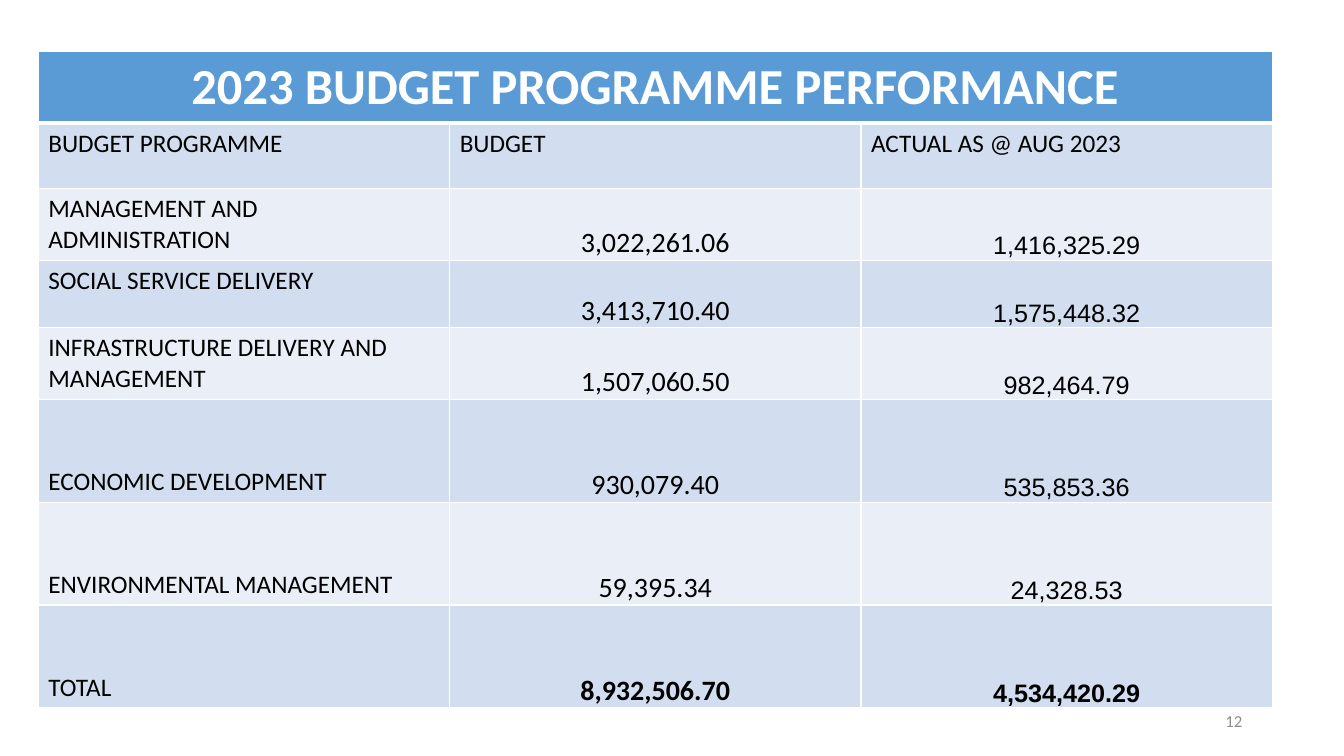
from lxml import etree
from pptx import Presentation
from pptx.dml.color import RGBColor
from pptx.enum.text import MSO_ANCHOR as Anchor, PP_ALIGN as Align
from pptx.oxml.ns import qn
from pptx.util import Pt

EMU_PER_PX = 9144  # 100 px to the inch

WHITE = RGBColor(0xFF, 0xFF, 0xFF)
BLACK = RGBColor(0x00, 0x00, 0x00)
GREY = RGBColor(0x8C, 0x8C, 0x8C)
HEADER_BLUE = RGBColor(0x5B, 0x9B, 0xD5)
BANDS = (RGBColor(0xD2, 0xDE, 0xEF), RGBColor(0xEA, 0xEF, 0xF7))

TITLE = "2023 BUDGET PROGRAMME PERFORMANCE"
HEADINGS = ("BUDGET PROGRAMME", "BUDGET", "ACTUAL AS @ AUG 2023")
PROGRAMMES = (
    ("MANAGEMENT AND ADMINISTRATION", "3,022,261.06", "1,416,325.29"),
    ("SOCIAL SERVICE DELIVERY", "3,413,710.40", "1,575,448.32"),
    ("INFRASTRUCTURE DELIVERY AND MANAGEMENT", "1,507,060.50", "982,464.79"),
    ("ECONOMIC DEVELOPMENT", "930,079.40", "535,853.36"),
    ("ENVIRONMENTAL MANAGEMENT", "59,395.34", "24,328.53"),
    ("TOTAL", "8,932,506.70", "4,534,420.29"),
)
ROW_HEIGHTS = (67, 65, 67, 67, 67, 102, 102, 102)
FIRST_TALL_ROW = 5
COLUMN_WIDTH = 408


def px(length):
    return length * EMU_PER_PX


class SlideBuilder:
    def __init__(self, slide, font="Calibri"):
        self.slide = slide
        self.font = font

    def add_span(self, frame, text, size, color=BLACK, bold=False, align=Align.LEFT, font=None):
        para = frame.paragraphs[0]
        para.alignment = align
        span = para.add_run()
        span.text = text
        span.font.name = font or self.font
        span.font.size = Pt(size)
        span.font.bold = bold
        span.font.color.rgb = color

    def text(self, left, top, width, height, text, size, **style):
        box = self.slide.shapes.add_textbox(px(left), px(top), px(width), px(height))
        box.text_frame.word_wrap = True
        box.text_frame.vertical_anchor = Anchor.MIDDLE
        self.add_span(box.text_frame, text, size, **style)

    def table(self, left, top, column_widths, row_heights):
        frame = self.slide.shapes.add_table(
            len(row_heights), len(column_widths), px(left), px(top),
            px(sum(column_widths)), px(sum(row_heights)))
        table = frame.table
        table.first_row = table.horz_banding = False
        for column, width in zip(table.columns, column_widths):
            column.width = px(width)
        for row, height in zip(table.rows, row_heights):
            row.height = px(height)
        return table

    def paint_cell(self, cell, fill, top=1, bottom=1):
        """Give a cell its fill and white borders; top and bottom are widths in points."""
        properties = cell._tc.get_or_add_tcPr()
        for side, width in (("L", 1), ("R", 1), ("T", top), ("B", bottom)):
            line = etree.SubElement(properties, qn(f"a:ln{side}"), w=str(Pt(width)))
            solid = etree.SubElement(line, qn("a:solidFill"))
            etree.SubElement(solid, qn("a:srgbClr"), val=str(WHITE))
        cell.fill.solid()
        cell.fill.fore_color.rgb = fill

    def amount(self, cell, text, size, font, bold):
        cell.vertical_anchor = Anchor.BOTTOM
        cell.margin_left = cell.margin_right = cell.margin_top = px(1)
        cell.margin_bottom = 0
        self.add_span(cell.text_frame, text, size, bold=bold, align=Align.CENTER, font=font)


def build_budget_table(builder):
    table = builder.table(38, 51, [COLUMN_WIDTH] * len(HEADINGS), ROW_HEIGHTS)
    for row_index, row in enumerate(table.rows):
        for cell in row.cells:
            if row_index == 0:
                builder.paint_cell(cell, HEADER_BLUE, bottom=3)
            else:
                builder.paint_cell(cell, BANDS[(row_index - 1) % 2],
                                   top=3 if row_index == 1 else 1)

    title = table.cell(0, 0)
    title.merge(table.cell(0, len(HEADINGS) - 1))
    builder.add_span(title.text_frame, TITLE, 36, WHITE, bold=True, align=Align.CENTER)
    for column, heading in enumerate(HEADINGS):
        builder.add_span(table.cell(1, column).text_frame, heading, 18)

    for row, (programme, budget, actual) in enumerate(PROGRAMMES, start=2):
        name = table.cell(row, 0)
        if row >= FIRST_TALL_ROW:
            name.vertical_anchor = Anchor.BOTTOM
        builder.add_span(name.text_frame, programme, 18)
        is_total = programme == "TOTAL"
        builder.amount(table.cell(row, 1), budget, 20, "Calibri", is_total)
        builder.amount(table.cell(row, 2), actual, 18, "Arial", is_total)


def main():
    deck = Presentation()
    deck.slide_width, deck.slide_height = px(1333), px(750)
    builder = SlideBuilder(deck.slides.add_slide(deck.slide_layouts[6]))
    build_budget_table(builder)
    builder.text(942, 695, 300, 40, "12", 12, color=GREY, align=Align.RIGHT)
    deck.save("out.pptx")


if __name__ == "__main__":
    main()
